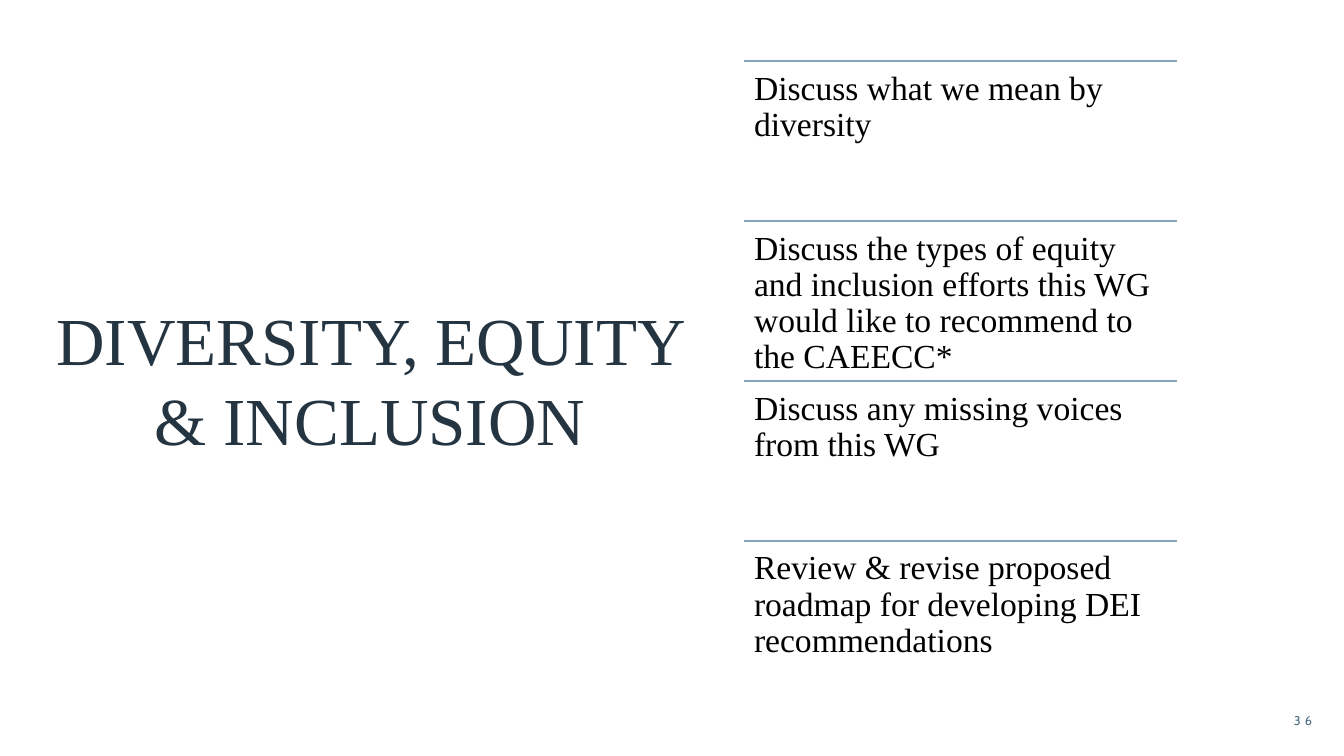
from lxml import etree
from pptx import Presentation
from pptx.dml.color import RGBColor
from pptx.enum.shapes import MSO_CONNECTOR
from pptx.enum.text import MSO_ANCHOR, PP_ALIGN
from pptx.oxml.ns import qn
from pptx.util import Pt

LINE = MSO_CONNECTOR.STRAIGHT
TOP, MIDDLE = MSO_ANCHOR.TOP, MSO_ANCHOR.MIDDLE
LEFT, CENTER, RIGHT = PP_ALIGN.LEFT, PP_ALIGN.CENTER, PP_ALIGN.RIGHT
SERIF = "Times New Roman"


def px(n):
    return round(n * 914400 / 100.8)


def set_text(shape, text, size, font, color, align, anchor):
    tf = shape.text_frame
    tf.word_wrap = True
    tf.vertical_anchor = anchor
    p = tf.paragraphs[0]
    p.text = text
    p.alignment = align
    p.font.size = Pt(size)
    p.font.name = font
    p.font.color.rgb = RGBColor.from_string(color)
    return tf


prs = Presentation()
prs.slide_width, prs.slide_height = px(1344), px(756)
s = prs.slides.add_slide(prs.slide_layouts[5])

title = s.shapes.title
title.left, title.top, title.width, title.height = px(30), px(110), px(680), px(537)
tf = set_text(title, "DIVERSITY, EQUITY & INCLUSION", 48, SERIF, "243541", CENTER, MIDDLE)
tf.paragraphs[0].space_before = Pt(10)

topics = [
    "Discuss what we mean by diversity",
    "Discuss the types of equity and inclusion efforts this WG would like to recommend to the CAEECC*",
    "Discuss any missing voices from this WG",
    "Review & revise proposed roadmap for developing DEI recommendations",
]
x, y0, w, pitch = 744, 61, 433, 160
for i, topic in enumerate(topics):
    y = y0 + i * pitch
    rule = s.shapes.add_connector(LINE, px(x), px(y), px(x + w), px(y))
    rule.line.color.rgb = RGBColor.from_string("83A6BC")
    rule.line.width = Pt(1)
    etree.SubElement(rule._element.spPr, qn("a:effectLst"))

    box = s.shapes.add_textbox(px(x), px(y), px(w), px(pitch))
    tf = set_text(box, topic, 24, SERIF, "000000", LEFT, TOP)
    tf.margin_left = tf.margin_top = tf.margin_right = tf.margin_bottom = px(10)
    tf.paragraphs[0].line_spacing = 0.9

number = s.shapes.add_textbox(px(1226), px(701), px(96), px(40))
tf = set_text(number, "36", 9, "Cabin", "486B83", RIGHT, MIDDLE)
tf.paragraphs[0].runs[0]._r.get_or_add_rPr().set("spc", "300")

prs.save("out.pptx")
